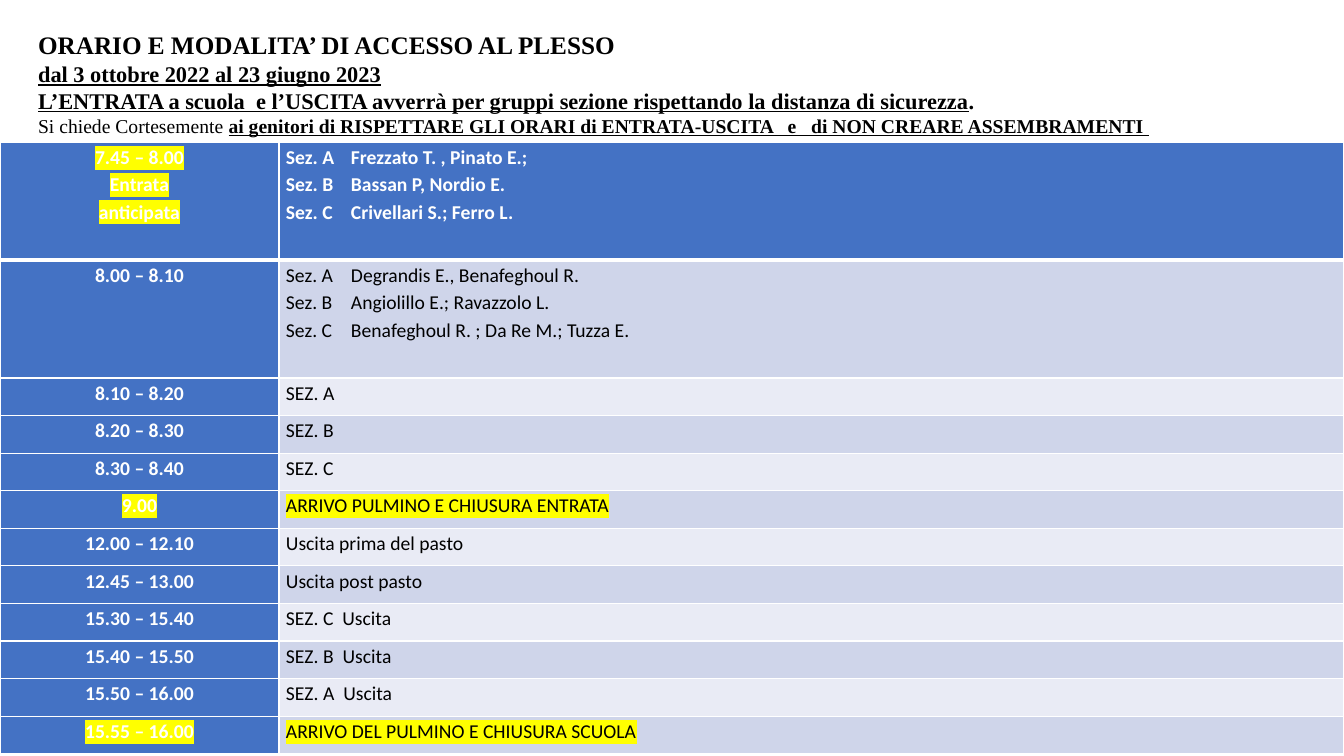
from dataclasses import dataclass

from lxml import etree
from pptx import Presentation
from pptx import util as u
from pptx.dml.color import RGBColor
from pptx.enum import text
from pptx.oxml import ns

PX_PER_INCH = 100.8
BLUE, WHITE, BLACK, YELLOW = "4472C4", "FFFFFF", "000000", "FFFF00"
BANDS = ("E9EBF5", "CFD5EA")
TALL_ROW, SHORT_ROWS_TOTAL = 118, 376
TAB_STOP = 65


@dataclass(frozen=True)
class Slot:
    """One timetable row."""
    times: tuple[str, ...]
    entries: tuple[str, ...]
    time_marked: bool = False
    entry_marked: bool = False


@dataclass(frozen=True)
class Words:
    """A stretch of heading text."""
    wording: str
    bold: bool = True
    underline: bool = True


@dataclass(frozen=True)
class Line:
    """One heading line."""
    size: int
    stretches: tuple[Words, ...]


HEADING = (
    Line(18, (Words("ORARIO E MODALITA’ DI ACCESSO AL PLESSO", underline=False),)),
    Line(16, (Words("dal 3 ottobre 2022 al 23 giugno 2023"),)),
    Line(16, (Words("L’ENTRATA a scuola  e l’USCITA avverrà per gruppi sezione "
                    "rispettando la distanza di sicurezza"),
              Words(".", underline=False))),
    Line(14, (Words("Si chiede Cortesemente ", bold=False, underline=False),
              Words("ai genitori di RISPETTARE GLI ORARI di ENTRATA-USCITA   e   "
                    "di NON CREARE ASSEMBRAMENTI "))),
)

SLOTS = (
    Slot(("7.45 – 8.00", "Entrata", "anticipata"),
         ("Sez. A\tFrezzato T. , Pinato E.;", "Sez. B\tBassan P, Nordio E.",
          "Sez. C\tCrivellari S.; Ferro L."), time_marked=True),
    Slot(("8.00 – 8.10",),
         ("Sez. A\tDegrandis E., Benafeghoul R.", "Sez. B\tAngiolillo E.; Ravazzolo L.",
          "Sez. C\tBenafeghoul R. ; Da Re M.; Tuzza E.")),
    Slot(("8.10 – 8.20",), ("SEZ. A",)),
    Slot(("8.20 – 8.30",), ("SEZ. B",)),
    Slot(("8.30 – 8.40",), ("SEZ. C",)),
    Slot(("9.00",), ("ARRIVO PULMINO E CHIUSURA ENTRATA",), True, True),
    Slot(("12.00 – 12.10",), ("Uscita prima del pasto",)),
    Slot(("12.45 – 13.00",), ("Uscita post pasto",)),
    Slot(("15.30 – 15.40",), ("SEZ. C  Uscita",)),
    Slot(("15.40 – 15.50",), ("SEZ. B  Uscita",)),
    Slot(("15.50 – 16.00",), ("SEZ. A  Uscita",)),
    Slot(("15.55 – 16.00",), ("ARRIVO DEL PULMINO E CHIUSURA SCUOLA",), True, True),
)


def px(length: int) -> int:
    """Turn px into EMU."""
    return u.Inches(length / PX_PER_INCH)


def colour(code: str) -> RGBColor:
    """Turn a hex string into a colour."""
    return RGBColor.from_string(code)


def add_colour(parent, tag: str, code: str, **attributes: str) -> None:
    """Append an XML element that carries a colour."""
    child = etree.SubElement(parent, ns.qn(tag), **attributes)
    if tag != "a:highlight":
        child = etree.SubElement(child, ns.qn("a:solidFill"))
    etree.SubElement(child, ns.qn("a:srgbClr"), val=code)


def set_font(para, name: str, size: int, code: str) -> None:
    """Set the font shared by all runs of a paragraph."""
    para.font.name = name
    para.font.size = u.Pt(size)
    para.font.color.rgb = colour(code)


def fill_paragraphs(frame, count: int) -> list:
    """Return the given number of paragraphs of a text frame."""
    return [frame.paragraphs[0], *(frame.add_paragraph() for _ in range(count - 1))]


def draw_heading(page) -> None:
    """Write the heading in the title placeholder."""
    title = page.shapes.title
    title.left, title.top, title.width, title.height = map(px, (28, 24, 1164, 119))
    frame = title.text_frame
    frame.word_wrap = True
    frame.auto_size = text.MSO_AUTO_SIZE.SHAPE_TO_FIT_TEXT
    frame.vertical_anchor = text.MSO_ANCHOR.MIDDLE
    for para, line in zip(fill_paragraphs(frame, len(HEADING)), HEADING):
        para.alignment = text.PP_ALIGN.JUSTIFY
        set_font(para, "Times New Roman", line.size, BLACK)
        for stretch in line.stretches:
            span = para.add_run()
            span.text = stretch.wording
            span.font.bold = stretch.bold
            span.font.underline = stretch.underline


def draw_cell(cell, lines: tuple[str, ...], row: int, column: int, marked: bool) -> None:
    """Fill and format one timetable cell."""
    head = row == 0 or column == 0
    cell.margin_left = cell.margin_right = px(7)
    cell.margin_top = cell.margin_bottom = 0
    widths = {"a:lnL": 1, "a:lnR": 1, "a:lnT": 3 if row == 1 else 1,
              "a:lnB": 3 if row == 0 else 1}
    for tag, width in widths.items():
        add_colour(cell._tc.get_or_add_tcPr(), tag, WHITE, w=str(u.Pt(width)))
    cell.fill.solid()
    cell.fill.fore_color.rgb = colour(BLUE if head else BANDS[row % 2])
    for para, wording in zip(fill_paragraphs(cell.text_frame, len(lines)), lines):
        para.alignment = text.PP_ALIGN.JUSTIFY if column else text.PP_ALIGN.CENTER
        para.line_spacing = 1.15
        if "\t" in wording:
            tabs = etree.SubElement(para._p.get_or_add_pPr(), ns.qn("a:tabLst"))
            etree.SubElement(tabs, ns.qn("a:tab"), pos=str(px(TAB_STOP)), algn="l")
        set_font(para, "Calibri", 14, WHITE if head else BLACK)
        para.font.bold = head
        span = para.add_run()
        span.text = wording
        if marked:
            add_colour(span._r.get_or_add_rPr(), "a:highlight", YELLOW)


def draw_timetable(page) -> None:
    """Draw the table of entry and exit times."""
    frame = page.shapes.add_table(len(SLOTS), 2, 0, px(142), px(1344), px(612))
    table = frame.table
    table.first_col = True
    table.columns[0].width, table.columns[1].width = px(279), px(1065)
    for row, slot in enumerate(SLOTS):
        tall = len(slot.entries) > 1
        table.rows[row].height = px(TALL_ROW) if tall else px(SHORT_ROWS_TOTAL) // 10
        draw_cell(table.cell(row, 0), slot.times, row, 0, slot.time_marked)
        draw_cell(table.cell(row, 1), slot.entries, row, 1, slot.entry_marked)


def main() -> None:
    """Build the slide and save it."""
    deck = Presentation()
    deck.slide_width, deck.slide_height = px(1344), px(756)
    page = deck.slides.add_slide(deck.slide_layouts.get_by_name("Title Only"))
    draw_heading(page)
    draw_timetable(page)
    deck.save("out.pptx")


if __name__ == "__main__":
    main()
